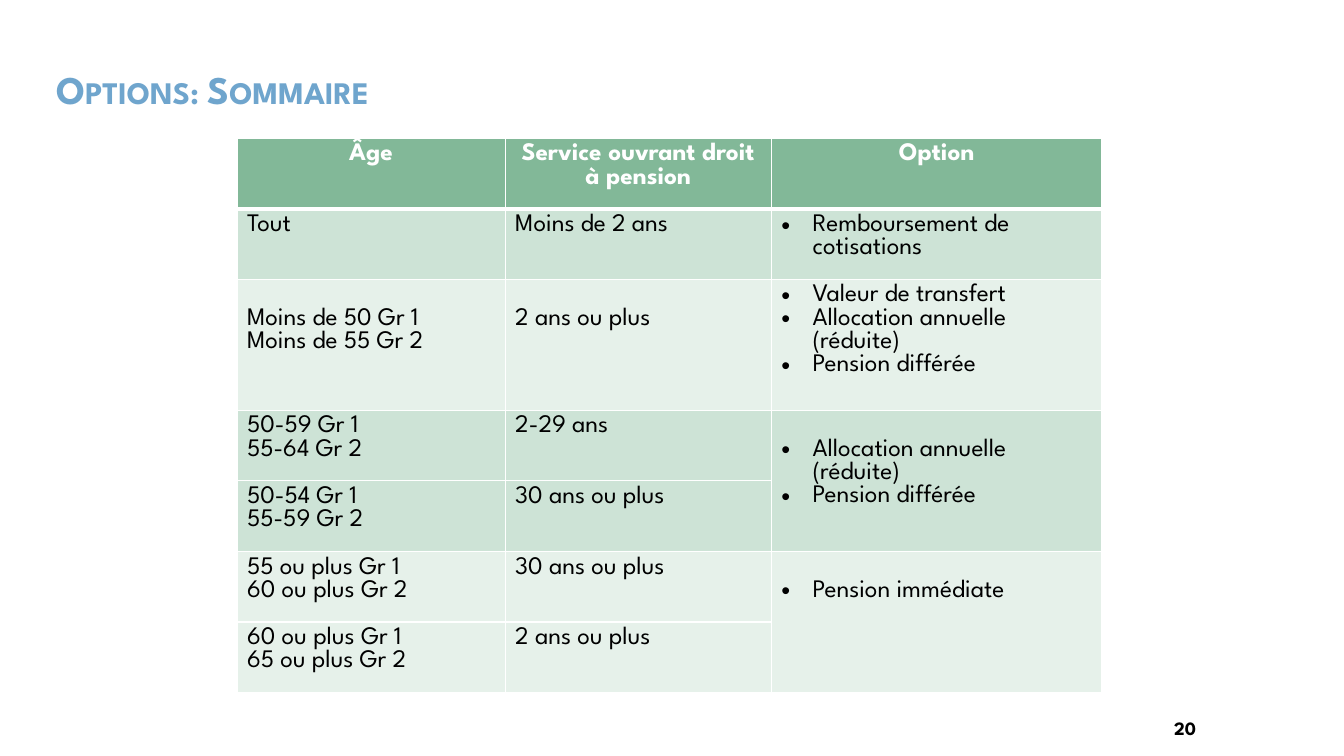
from lxml import etree
from pptx import Presentation
from pptx import util as u
from pptx.dml.color import RGBColor
from pptx.enum import text
from pptx.oxml.ns import qn

FONT = "League Spartan"
WHITE, BLACK, BLUE = "FFFFFF", "000000", "6FA5CD"
GREEN, MID_GREEN, PALE_GREEN = "82B898", "CDE3D6", "E6F1EA"
INDENT = u.Inches(0.31)
TOP = 0.05
LOWERED = 0.28  # one text line below the usual cell margin


def style(font, size, color, bold):
    font.name, font.size, font.bold = FONT, u.Pt(size), bold
    font.color.rgb = RGBColor.from_string(color)


def add_border(cell, position, side, points):
    """Insert a white cell edge; position keeps the edges in schema order."""
    line = etree.Element(qn("a:" + side), w=str(u.Pt(points)))
    fill = etree.SubElement(line, qn("a:solidFill"))
    etree.SubElement(fill, qn("a:srgbClr"), val=WHITE)
    cell._tc.get_or_add_tcPr().insert(position, line)


deck = Presentation()
deck.slide_width, deck.slide_height = u.Inches(13.33), u.Inches(7.5)
page = deck.slides.add_slide(deck.slide_layouts[6])

# Each row: height, fill, top margins, then the lines of each cell
rows = [
    (0.7, GREEN, (TOP, TOP, TOP),
     [["Âge"], ["Service ouvrant droit à pension"], ["Option"]]),
    (0.7, MID_GREEN, (TOP, TOP, TOP),
     [["Tout"], ["Moins de 2 ans"], ["Remboursement de cotisations"]]),
    (1.3, PALE_GREEN, (LOWERED, LOWERED, TOP),
     [["Moins de 50 Gr 1", "Moins de 55 Gr 2"], ["2 ans ou plus"],
      ["Valeur de transfert", "Allocation annuelle (réduite)", "Pension différée"]]),
    (0.7, MID_GREEN, (TOP, TOP, LOWERED),
     [["50-59 Gr 1", "55-64 Gr 2"], ["2-29 ans"],
      ["Allocation annuelle (réduite)", "Pension différée"]]),
    (0.7, MID_GREEN, (TOP, TOP, TOP),
     [["50-54 Gr 1", "55-59 Gr 2"], ["30 ans ou plus"], []]),
    (0.7, PALE_GREEN, (TOP, TOP, LOWERED),
     [["55 ou plus Gr 1", "60 ou plus Gr 2"], ["30 ans ou plus"],
      ["Pension immédiate"]]),
    (0.7, PALE_GREEN, (TOP, TOP, TOP),
     [["60 ou plus Gr 1", "65 ou plus Gr 2"], ["2 ans ou plus"], []]),
]

table = page.shapes.add_table(len(rows), 3, u.Inches(2.35), u.Inches(1.37),
                              u.Inches(8.58), u.Inches(5.5)).table
table.first_row = table.horz_banding = False
for column, width in zip(table.columns, (2.66, 2.64, 3.28)):
    column.width = u.Inches(width)
for first in (3, 5):
    table.cell(first, 2).merge(table.cell(first + 1, 2))

for r, (height, fill, margins, cells) in enumerate(rows):
    table.rows[r].height = u.Inches(height)
    header = r == 0
    for c, (margin, lines) in enumerate(zip(margins, cells)):
        cell = table.cell(r, c)
        cell.margin_top = u.Inches(margin)
        cell.fill.solid()
        cell.fill.fore_color.rgb = RGBColor.from_string(fill)
        edges = {"lnL": 1, "lnR": 1, "lnT": 3 if r == 1 else 1, "lnB": 3 if header else 1}
        for position, (side, points) in enumerate(edges.items()):
            add_border(cell, position, side, points)
        for i, line in enumerate(lines):
            frame = cell.text_frame
            para = frame.paragraphs[0] if i == 0 else frame.add_paragraph()
            para.text = line
            if header:
                para.alignment = text.PP_ALIGN.CENTER
            elif c == 2:
                props = para._p.get_or_add_pPr()
                props.set("marL", str(INDENT))
                props.set("indent", str(-INDENT))
                etree.SubElement(props, qn("a:buFont"), typeface="Arial")
                etree.SubElement(props, qn("a:buChar"), char="•")
            style(para.font, 18, WHITE if header else BLACK, header)

title = page.shapes.add_textbox(u.Inches(0.46), u.Inches(0.63), u.Inches(3.5), u.Inches(0.56))
title.text_frame.word_wrap = True
title.text_frame.vertical_anchor = text.MSO_ANCHOR.MIDDLE
para = title.text_frame.paragraphs[0]
para.line_spacing = 0.9
span = para.add_run()
span.text = "Options: Sommaire"
style(span.font, 28, BLUE, True)
span._r.get_or_add_rPr().set("cap", "small")

number = page.shapes.add_textbox(u.Inches(9.71), u.Inches(7.06), u.Inches(2.25), u.Inches(0.3))
number.text_frame.word_wrap = True
para = number.text_frame.paragraphs[0]
para.text = "20"
para.alignment = text.PP_ALIGN.RIGHT
style(para.font, 13.5, BLACK, True)

deck.save("out.pptx")
